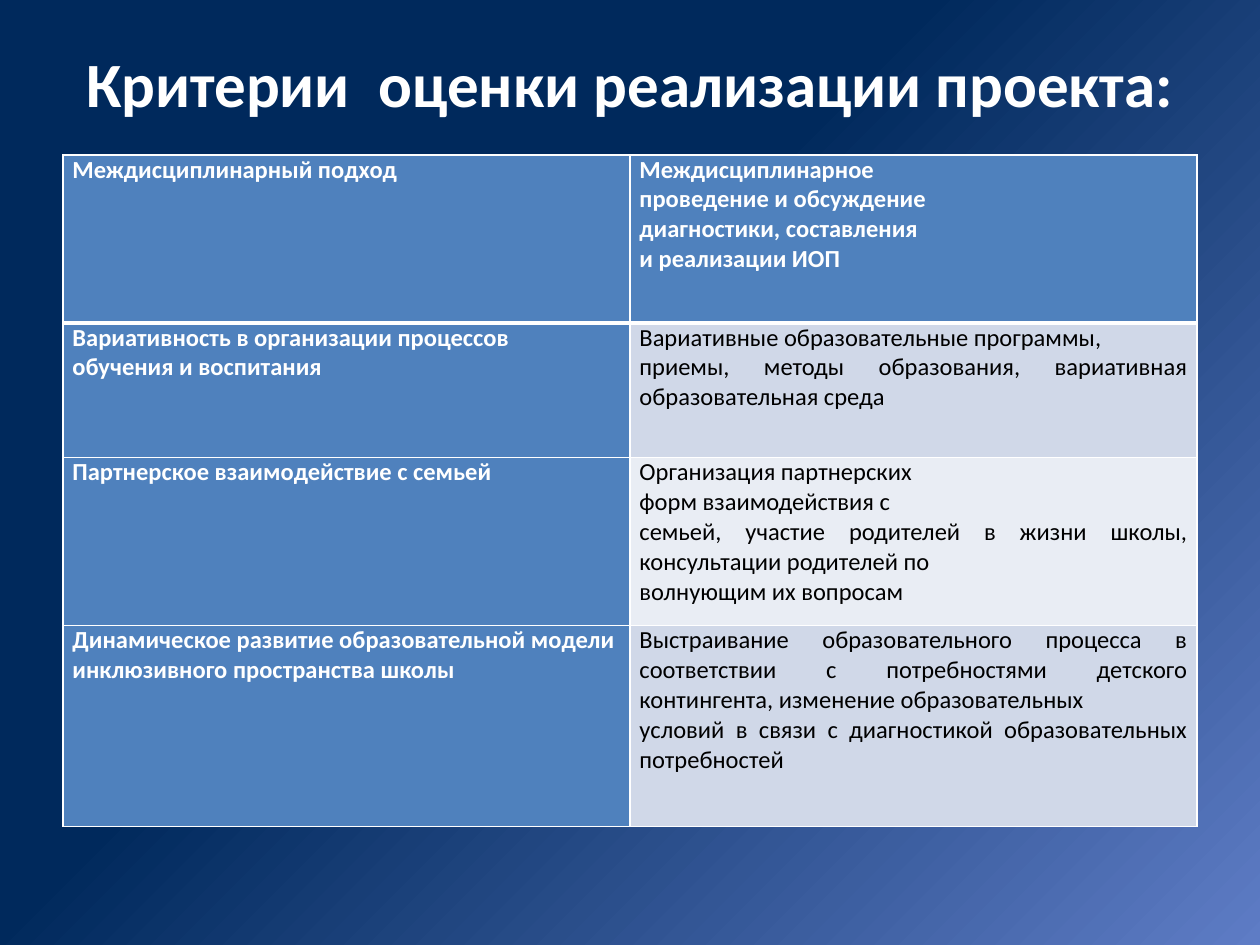
from lxml import etree
from pptx import Presentation
from pptx.dml.color import RGBColor
from pptx.enum.text import MSO_ANCHOR, MSO_AUTO_SIZE, PP_ALIGN
from pptx.oxml.ns import qn
from pptx.util import Pt

TOP = MSO_ANCHOR.TOP
NO_AUTOFIT = MSO_AUTO_SIZE.NONE
CENTER, JUSTIFY, LEFT = PP_ALIGN.CENTER, PP_ALIGN.JUSTIFY, PP_ALIGN.LEFT
TITLE_ONLY = 5

FONT = "Calibri"
WHITE, BLACK = "FFFFFF", "000000"
NAVY, PERIWINKLE = "00295C", "5E7CC5"
HEADER_BLUE, BAND_DARK, BAND_LIGHT = "4F81BD", "D0D8E8", "E9EDF4"
THIN, THICK = 1, 3

ROW_HEIGHTS = [96, 77, 96, 115]
# Each row: criterion paragraphs, then description paragraphs
CRITERIA = [
    (["Междисциплинарный подход"],
     ["Междисциплинарное", "проведение и обсуждение",
      "диагностики, составления", "и реализации ИОП"]),
    (["Вариативность в организации процессов", "обучения и воспитания"],
     ["Вариативные образовательные программы,",
      "приемы, методы образования, вариативная образовательная среда"]),
    (["Партнерское взаимодействие с семьей"],
     ["Организация партнерских", "форм взаимодействия с",
      "семьей, участие родителей в жизни школы, консультации родителей по",
      "волнующим их вопросам"]),
    (["Динамическое развитие образовательной модели инклюзивного пространства школы"],
     ["Выстраивание образовательного процесса в соответствии с потребностями "
      "детского контингента, изменение образовательных",
      "условий в связи с диагностикой образовательных потребностей"]),
]


def color(hex_string):
    return RGBColor.from_string(hex_string)


def add_run(paragraph, text, size, hex_color, bold):
    run = paragraph.add_run()
    run.text = text
    run.font.name = FONT
    run.font.size = Pt(size)
    run.font.bold = bold
    run.font.color.rgb = color(hex_color)


def set_background(slide):
    """Radial gradient spreading from the bottom right corner."""
    fill = slide.background.fill
    fill.gradient()
    stops = zip(fill.gradient_stops, [(0, PERIWINKLE), (0.58, NAVY)])
    for stop, (position, hex_color) in stops:
        stop.position = position
        stop.color.rgb = color(hex_color)
    gradient = slide.background._cSld.find(".//" + qn("a:gradFill"))
    gradient.remove(gradient.find(qn("a:lin")))
    radial = etree.SubElement(gradient, qn("a:path"), path="circle")
    etree.SubElement(radial, qn("a:fillToRect"), l="100000", t="100000")


def place_title(slide, left, top, width, height):
    title = slide.shapes.title
    title.left, title.top = Pt(left), Pt(top)
    title.width, title.height = Pt(width), Pt(height)
    frame = title.text_frame
    frame.word_wrap = True
    frame.auto_size = NO_AUTOFIT
    frame.vertical_anchor = TOP
    paragraph = frame.paragraphs[0]
    paragraph.alignment = CENTER
    add_run(paragraph, "Критерии  оценки реализации проекта:", 36, WHITE, True)


def set_borders(cell, top, bottom):
    properties = cell._tc.get_or_add_tcPr()
    sides = {"lnL": THIN, "lnR": THIN, "lnT": top, "lnB": bottom}
    for side, width in sides.items():
        line = etree.SubElement(properties, qn("a:" + side), w=str(Pt(width)))
        solid = etree.SubElement(line, qn("a:solidFill"))
        etree.SubElement(solid, qn("a:srgbClr"), val=WHITE)


def fill_cell(cell, lines, row, column):
    emphasized = row == 0 or column == 0
    band = BAND_DARK if row % 2 else BAND_LIGHT
    set_borders(cell, THICK if row == 1 else THIN, THICK if row == 0 else THIN)
    cell.fill.solid()
    cell.fill.fore_color.rgb = color(HEADER_BLUE if emphasized else band)
    cell.margin_left = cell.margin_right = Pt(5.4)
    cell.margin_top = cell.margin_bottom = 0
    cell.vertical_anchor = TOP
    last_criterion = column == 0 and row == len(CRITERIA) - 1
    frame = cell.text_frame
    for index, text in enumerate(lines):
        paragraph = frame.add_paragraph() if index else frame.paragraphs[0]
        paragraph.alignment = LEFT if last_criterion else JUSTIFY
        add_run(paragraph, text, 14, WHITE if emphasized else BLACK, emphasized)


def add_criteria_table(slide, left, top, width):
    frame = slide.shapes.add_table(len(CRITERIA), 2, Pt(left), Pt(top),
                                   Pt(width), Pt(sum(ROW_HEIGHTS)))
    table = frame.table
    table.first_col = True
    for column in table.columns:
        column.width = Pt(width / 2)
    for row, (height, texts) in enumerate(zip(ROW_HEIGHTS, CRITERIA)):
        table.rows[row].height = Pt(height)
        for column, lines in enumerate(texts):
            fill_cell(table.cell(row, column), lines, row, column)


def main():
    presentation = Presentation()
    presentation.slide_width, presentation.slide_height = Pt(720), Pt(540)
    slide = presentation.slides.add_slide(presentation.slide_layouts[TITLE_ONLY])
    set_background(slide)
    place_title(slide, 36, 21.6, 648, 90)
    add_criteria_table(slide, 36, 88.5, 648)
    presentation.save("out.pptx")


if __name__ == "__main__":
    main()
